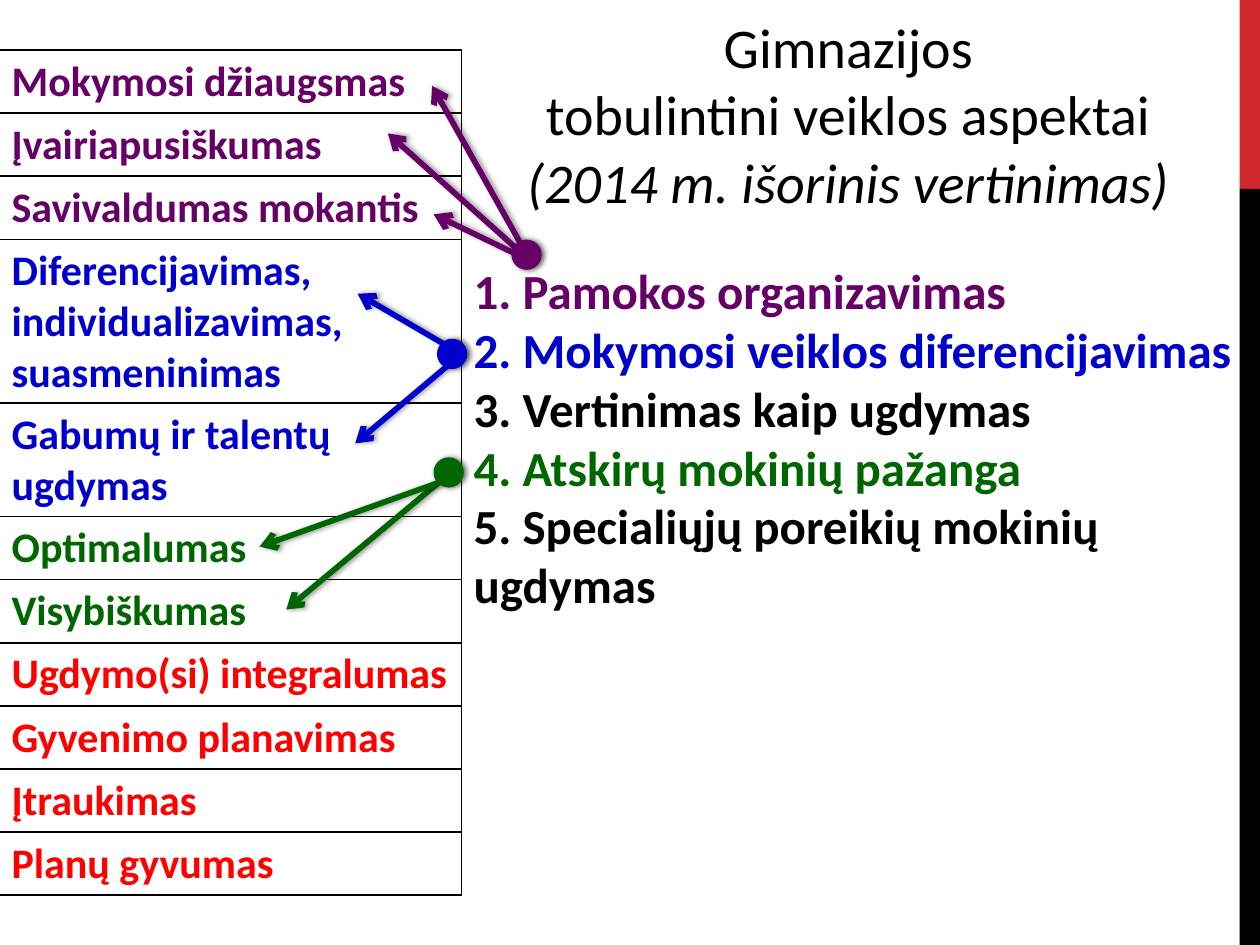
from pptx import Presentation
from pptx.dml.color import RGBColor
from pptx.enum.shapes import MSO_CONNECTOR, MSO_SHAPE
from pptx.enum.text import PP_ALIGN
from pptx.oxml import parse_xml
from pptx.oxml.ns import nsdecls
from pptx.util import Cm, Pt

LINE = MSO_CONNECTOR.STRAIGHT
RECT, OVAL = MSO_SHAPE.RECTANGLE, MSO_SHAPE.OVAL
LEFT, MID = PP_ALIGN.LEFT, PP_ALIGN.CENTER

BLACK = RGBColor(0, 0, 0)
CRIMSON = RGBColor(0xD1, 0x28, 0x2E)
PURPLE = RGBColor(0x66, 0, 0x66)
BLUE = RGBColor(0, 0, 0xCC)
GREEN = RGBColor(0, 0x66, 0)
RED = RGBColor(0xFF, 0, 0)

ROW, DOT = 1.27, 0.61
CELL = {"name": "Calibri", "size": Pt(24), "bold": True}
LIST = {"name": "Calibri", "size": Pt(28), "bold": True}
HEAD = {"name": "Calibri", "size": Pt(32), "bold": False}

TRAITS = [
    ("Mokymosi džiaugsmas", PURPLE, ROW),
    ("Įvairiapusiškumas", PURPLE, ROW),
    ("Savivaldumas mokantis", PURPLE, ROW),
    ("Diferencijavimas, individualizavimas, suasmeninimas", BLUE, 3.3),
    ("Gabumų ir talentų ugdymas", BLUE, 2.29),
    ("Optimalumas", GREEN, ROW),
    ("Visybiškumas", GREEN, ROW),
    ("Ugdymo(si) integralumas", RED, ROW),
    ("Gyvenimo planavimas", RED, ROW),
    ("Įtraukimas", RED, ROW),
    ("Planų gyvumas", RED, ROW),
]
AIMS = [
    ("1. Pamokos organizavimas", PURPLE),
    ("2. Mokymosi veiklos diferencijavimas", BLUE),
    ("3. Vertinimas kaip ugdymas", BLACK),
    ("4. Atskirų mokinių pažanga", GREEN),
    ("5. Specialiųjų poreikių mokinių ugdymas", BLACK),
]
TITLE = [
    ("Gimnazijos ", False),
    ("tobulintini veiklos aspektai ", False),
    ("(2014 m. išorinis vertinimas) ", True),
]
LINKS = [
    (PURPLE, (10.31, 4.83), (10.69, 5.26),
     [(8.71, 1.73), (7.82, 2.69), (8.74, 4.32)]),
    (BLUE, (8.81, 6.83), (9.3, 7.14), [(7.21, 5.92), (7.16, 8.94)]),
    (GREEN, (8.74, 9.22), (8.84, 9.73), [(5.77, 12.29), (5.23, 11.02)]),
]


def style(run, color, form):
    for key, value in form.items():
        setattr(run.font, key, value)
    run.font.color.rgb = color


def add_run(para, text, color, form):
    run = para.add_run()
    run.text = text
    style(run, color, form)


def add_box(slide, *area):
    frame = slide.shapes.add_textbox(*map(Cm, area)).text_frame
    frame.word_wrap = True
    return frame


def add_shade(shape, blur, gap, alpha):
    shape._element.spPr.append(parse_xml(
        f'<a:effectLst {nsdecls("a")}>'
        f'<a:outerShdw blurRad="{Pt(blur)}" dist="{Pt(gap)}" dir="0" rotWithShape="0">'
        f'<a:srgbClr val="{BLACK}"><a:alpha val="{alpha * 1000}"/></a:srgbClr>'
        '</a:outerShdw></a:effectLst>'))


def add_solid(slide, kind, color, *area):
    shape = slide.shapes.add_shape(kind, *map(Cm, area))
    shape.fill.solid()
    shape.fill.fore_color.rgb = color
    shape.line.fill.background()
    return shape


def add_bar(slide, color, top, height):
    bar = add_solid(slide, RECT, color, 24.99, top, 0.41, height)
    bar.shadow.inherit = False


def add_dot(slide, color, left, top):
    dot = add_solid(slide, OVAL, color, left, top, DOT, DOT)
    add_shade(dot, 3, 1.5, 60)


def add_arrow(slide, color, start, end):
    arrow = slide.shapes.add_connector(LINE, *map(Cm, start + end))
    arrow.line.color.rgb = color
    arrow.line.width = Pt(3.25)
    arrow.line._ln.append(parse_xml(f'<a:tailEnd {nsdecls("a")} type="arrow"/>'))
    add_shade(arrow, 3.1, 1.8, 40)


def add_edges(cell):
    props = cell._tc.get_or_add_tcPr()
    for side in "LRTB":
        props.append(parse_xml(
            f'<a:ln{side} {nsdecls("a")} w="{Pt(1)}"><a:solidFill>'
            f'<a:srgbClr val="{BLACK}"/></a:solidFill></a:ln{side}>'))


def add_grid(slide):
    total = sum(height for _, _, height in TRAITS)
    area = map(Cm, (-0.02, 1.01, 9.32, total))
    table = slide.shapes.add_table(len(TRAITS), 1, *area).table
    table.first_row = table.horz_banding = False
    for i, (text, color, height) in enumerate(TRAITS):
        table.rows[i].height = Cm(height)
        cell = table.cell(i, 0)
        add_edges(cell)
        cell.fill.background()
        add_run(cell.text_frame.paragraphs[0], text, color, CELL)


def add_aims(slide):
    para = add_box(slide, 9.3, 5.13, 16.1, 7.44).paragraphs[0]
    para.alignment = LEFT
    for i, (text, color) in enumerate(AIMS):
        if i:
            para.add_line_break()
        add_run(para, text, color, LIST)


def add_title(slide):
    frame = add_box(slide, 9.75, 0.13, 14.96, 5.13)
    for i, (text, slant) in enumerate(TITLE):
        para = frame.add_paragraph() if i else frame.paragraphs[0]
        para.alignment = MID
        add_run(para, text, BLACK, {**HEAD, "italic": slant})


def main():
    deck = Presentation()
    deck.slide_width, deck.slide_height = Cm(25.4), Cm(19.05)
    slide = deck.slides.add_slide(deck.slide_layouts[6])
    add_bar(slide, CRIMSON, 0, 3.81)
    add_bar(slide, BLACK, 3.81, 15.24)
    add_aims(slide)
    add_grid(slide)
    add_title(slide)
    for color, spot, start, ends in LINKS:
        for end in ends:
            add_arrow(slide, color, start, end)
        add_dot(slide, color, *spot)
    deck.save("out.pptx")


if __name__ == "__main__":
    main()
